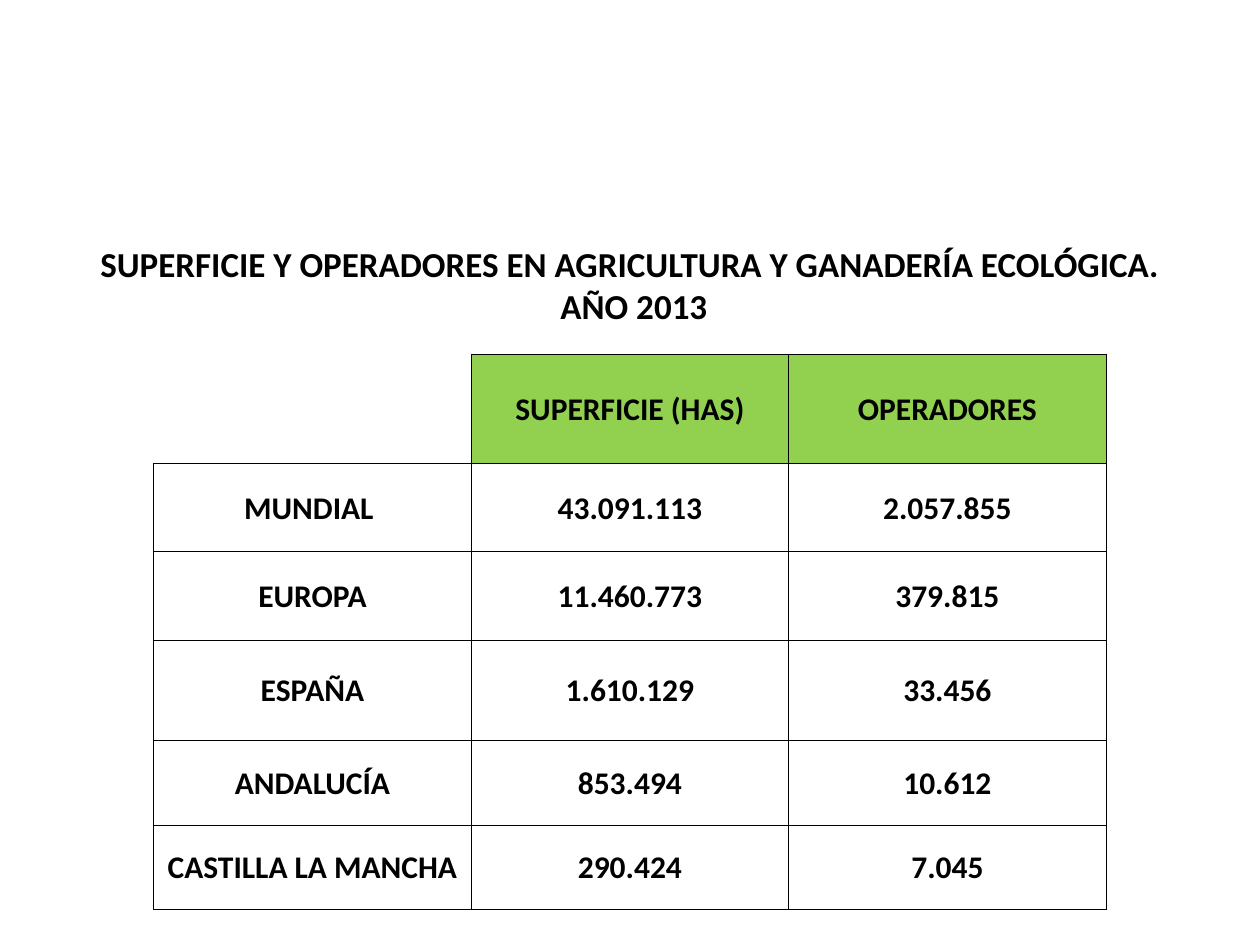
from dataclasses import dataclass

from lxml.etree import SubElement
from pptx import Presentation
from pptx.dml.color import RGBColor
from pptx.enum.text import MSO_ANCHOR, PP_ALIGN
from pptx.oxml.ns import qn
from pptx.util import Inches, Pt


@dataclass(frozen=True)
class Theme:
    font: str = "Calibri"
    ink: str = "000000"
    header: str = "92D050"
    title_size: int = 20
    table_size: int = 18
    border_width: float = 0.5


THEME = Theme()

TITLE = "SUPERFICIE Y OPERADORES EN AGRICULTURA Y GANADERÍA ECOLÓGICA.\v AÑO 2013"
FIGURES = [
    ("", "SUPERFICIE (HAS)", "OPERADORES"),
    ("MUNDIAL ", "43.091.113", "2.057.855"),
    ("EUROPA", "11.460.773", "379.815"),
    ("ESPAÑA", "1.610.129", "33.456"),
    ("ANDALUCÍA", "853.494", "10.612"),
    ("CASTILLA LA MANCHA", "290.424", "7.045"),
]
ROW_HEIGHTS = (0.87, 0.7, 0.7, 0.8, 0.67, 0.67)
COLUMN_WIDTH = 2.52


def write_text(frame, text, *, size, color=THEME.ink, bold=True, align=PP_ALIGN.CENTER):
    frame.word_wrap = True
    paragraph = frame.paragraphs[0]
    paragraph.text = text
    paragraph.alignment = align
    for run in paragraph.runs:
        run.font.name = THEME.font
        run.font.size = Pt(size)
        run.font.bold = bold
        run.font.color.rgb = RGBColor.from_string(color)


def set_borders(cell, visible):
    """Rule the sides named in visible (of L, R, T, B) and clear the others."""
    properties = cell._tc.get_or_add_tcPr()
    for side in "LRTB":
        line = SubElement(properties, qn(f"a:ln{side}"), w=str(Pt(THEME.border_width)))
        if side in visible:
            fill = SubElement(line, qn("a:solidFill"))
            SubElement(fill, qn("a:srgbClr"), val=THEME.ink)
        else:
            SubElement(line, qn("a:noFill"))


def format_cell(cell, text, *, is_header, is_corner):
    set_borders(cell, "RB" if is_corner else "LRTB")
    if is_header and not is_corner:
        cell.fill.solid()
        cell.fill.fore_color.rgb = RGBColor.from_string(THEME.header)
    else:
        cell.fill.background()
    cell.vertical_anchor = MSO_ANCHOR.MIDDLE
    cell.margin_left = cell.margin_right = cell.margin_top = Inches(0.01)
    cell.margin_bottom = 0
    write_text(cell.text_frame, text, size=THEME.table_size)


def add_title(slide):
    title = slide.shapes.title
    title.left, title.top = Inches(0.5), Inches(1.86)
    title.width, title.height = Inches(9), Inches(0.79)
    title.text_frame.vertical_anchor = MSO_ANCHOR.MIDDLE
    write_text(title.text_frame, TITLE, size=THEME.title_size)


def add_figures_table(slide):
    column_count = len(FIGURES[0])
    table = slide.shapes.add_table(
        len(FIGURES), column_count, Inches(1.22), Inches(2.81),
        Inches(COLUMN_WIDTH * column_count), Inches(sum(ROW_HEIGHTS)),
    ).table
    table.first_row = table.horz_banding = False
    for column in table.columns:
        column.width = Inches(COLUMN_WIDTH)
    for r, (height, values) in enumerate(zip(ROW_HEIGHTS, FIGURES)):
        table.rows[r].height = Inches(height)
        for c, value in enumerate(values):
            format_cell(table.cell(r, c), value,
                        is_header=r == 0, is_corner=r == c == 0)


def main():
    presentation = Presentation()
    presentation.slide_width, presentation.slide_height = Inches(10), Inches(7.5)
    title_only = presentation.slide_layouts[5]
    slide = presentation.slides.add_slide(title_only)
    add_title(slide)
    add_figures_table(slide)
    presentation.save("out.pptx")


if __name__ == "__main__":
    main()
